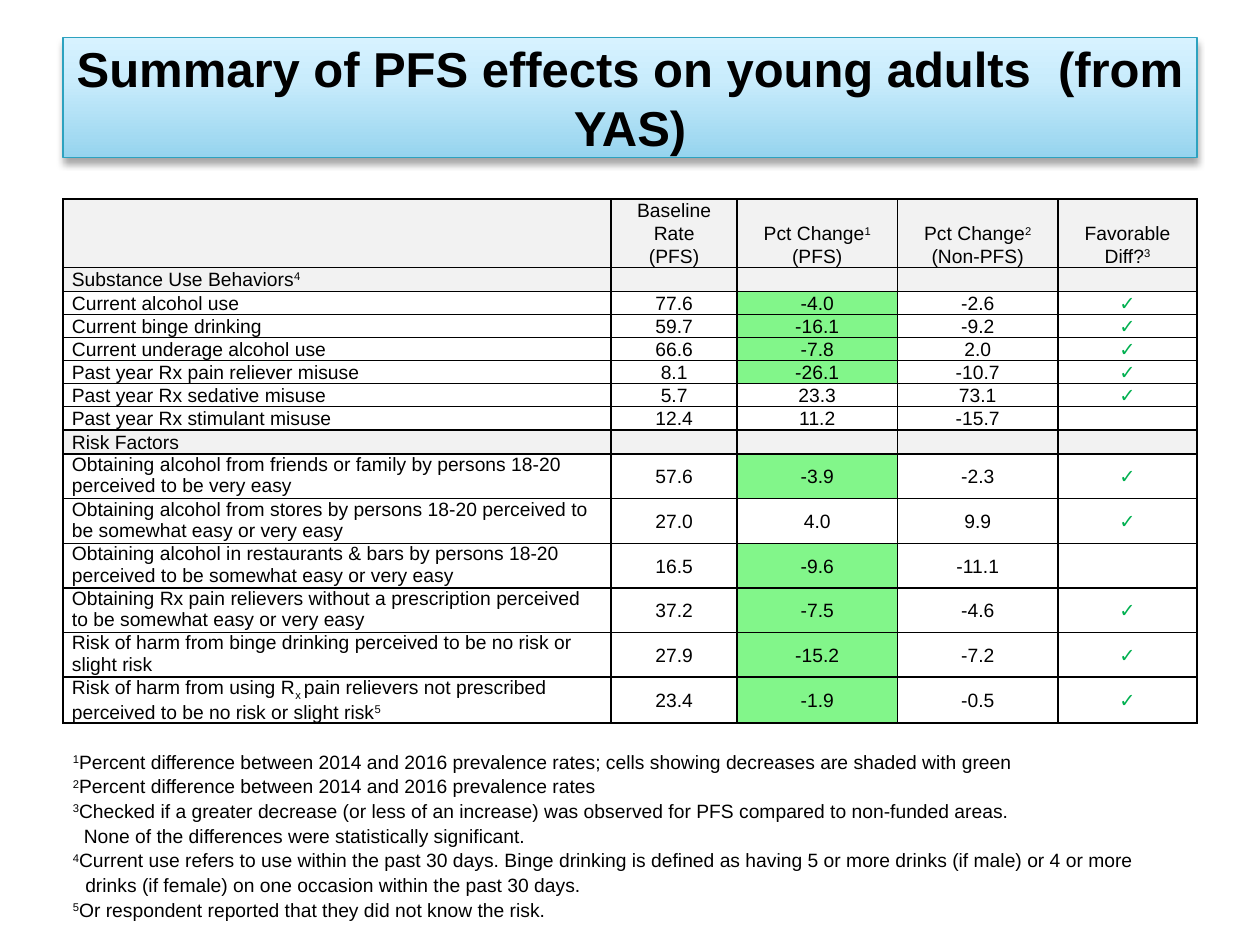
from copy import deepcopy
from dataclasses import dataclass

from pptx import Presentation
from pptx.dml.color import RGBColor
from pptx.enum.text import MSO_ANCHOR, MSO_AUTO_SIZE, PP_ALIGN
from pptx.oxml import parse_xml
from pptx.oxml.ns import nsdecls
from pptx.util import Cm, Pt

LEFT, CENTER = PP_ALIGN.LEFT, PP_ALIGN.CENTER
TOP, MIDDLE, BOTTOM = MSO_ANCHOR.TOP, MSO_ANCHOR.MIDDLE, MSO_ANCHOR.BOTTOM
NO_FIT = MSO_AUTO_SIZE.NONE
SUPER, SUB = 30000, -25000
CHECK = "✓"


@dataclass(frozen=True)
class Theme:
    font: str = "Arial"
    title_size: float = 28
    text_size: float = 11
    text: str = "000000"
    check: str = "00B050"
    decrease: str = "82F68A"
    header: str = "F2F2F2"
    plain: str = "FFFFFF"
    title_line: str = "2DA2BF"
    title_stops: tuple = ((0, "96D4EE"), (0.65, "C9ECFC"), (1, "D7F2FF"))


def apply(obj, fmt):
    for name, value in fmt.items():
        setattr(obj, name, value)


class Deck:
    """Holds the theme and the current slide and adds each kind of element."""

    def __init__(self, theme):
        self.theme = theme
        self.prs = Presentation()
        apply(self.prs, {"slide_width": Cm(25.4), "slide_height": Cm(19.05)})
        self.s = self.prs.slides.add_slide(self.prs.slide_layouts[5])

    def text(self, tf, paragraphs, fmt, size=None, color=None, bold=False):
        size = size or self.theme.text_size
        for i, runs in enumerate(paragraphs):
            p = tf.paragraphs[0] if i == 0 else tf.add_paragraph()
            apply(p, {"space_before": Pt(0), **fmt})
            p._p.get_or_add_endParaRPr().set("sz", str(int(size * 100)))
            for run in [runs] if isinstance(runs, str) else runs:
                text, baseline = (run, 0) if isinstance(run, str) else run
                if not text:
                    continue
                r = p.add_run()
                r.text = text
                apply(r.font, {"name": self.theme.font, "size": Pt(size), "bold": bold})
                r.font.color.rgb = RGBColor.from_string(color or self.theme.text)
                if baseline:
                    r._r.get_or_add_rPr().set("baseline", str(baseline))

    def title(self, text, box):
        sp = self.s.shapes.title
        apply(sp, box)
        sp.fill.gradient()
        sp.fill.gradient_angle = 90
        stops = sp._element.spPr.find(".//{*}gsLst")
        stops.append(deepcopy(stops[-1]))
        for stop, (position, color) in zip(sp.fill.gradient_stops, self.theme.title_stops):
            stop.position = position
            stop.color.rgb = RGBColor.from_string(color)
        sp.line.color.rgb = RGBColor.from_string(self.theme.title_line)
        sp.line.width = Pt(0.75)
        sp._element.spPr.append(parse_xml(
            f'<a:effectLst {nsdecls("a")}><a:outerShdw blurRad="{Pt(4)}" dist="{Pt(3)}" '
            'dir="5400000" rotWithShape="0"><a:srgbClr val="000000">'
            '<a:alpha val="35000"/></a:srgbClr></a:outerShdw></a:effectLst>'))
        apply(sp.text_frame, {"vertical_anchor": MIDDLE, "word_wrap": True, "auto_size": NO_FIT})
        self.text(sp.text_frame, [text], {"alignment": CENTER}, self.theme.title_size, bold=True)

    def table(self, left, top, widths, heights):
        frame = self.s.shapes.add_table(len(heights), len(widths), Cm(left), Cm(top),
                                        Cm(sum(widths)), Cm(sum(heights)))
        apply(frame.table, {"first_row": False, "horz_banding": False})
        for column, width in zip(frame.table.columns, widths):
            column.width = Cm(width)
        for row, height in zip(frame.table.rows, heights):
            row.height = Cm(height)
        return frame.table

    def cell(self, cell, paragraphs, fill, anchor=MIDDLE, align=CENTER, spacing=1.07, **font):
        apply(cell, {"margin_left": Cm(0.18), "margin_right": Cm(0.18), "margin_top": 0,
                     "margin_bottom": 0, "vertical_anchor": anchor})
        cell.fill.solid()
        cell.fill.fore_color.rgb = RGBColor.from_string(fill)
        for i, side in enumerate(("lnL", "lnR", "lnT", "lnB")):
            cell._tc.tcPr.insert(i, parse_xml(
                f'<a:{side} {nsdecls("a")} w="{Pt(1)}"><a:solidFill>'
                f'<a:srgbClr val="{self.theme.text}"/></a:solidFill></a:{side}>'))
        self.text(cell.text_frame, paragraphs, {"alignment": align, "line_spacing": spacing}, **font)

    def notes(self, notes, box):
        tf = self.s.shapes.add_textbox(*box).text_frame
        tf.word_wrap = True
        self.text(tf, [runs for runs, _, _ in notes], {"alignment": LEFT, "line_spacing": 1.07})
        for p, (_, margin, indent) in zip(tf.paragraphs, notes):
            pPr = p._p.get_or_add_pPr()
            pPr.set("marL", str(Cm(margin)))
            pPr.set("indent", str(Cm(indent)))


HEADER = [
    [""],
    ["Baseline Rate", "(PFS)"],
    [["Pct Change", ("1", SUPER)], "(PFS)"],
    [["Pct Change", ("2", SUPER)], "(Non-PFS)"],
    ["Favorable", ["Diff?", ("3", SUPER)]],
]
BEHAVIORS = [
    ("Current alcohol use", "77.6", "-4.0", "-2.6", CHECK),
    ("Current binge drinking", "59.7", "-16.1", "-9.2", CHECK),
    ("Current underage alcohol use", "66.6", "-7.8", "2.0", CHECK),
    ("Past year Rx pain reliever misuse", "8.1", "-26.1", "-10.7", CHECK),
    ("Past year Rx sedative misuse", "5.7", "23.3", "73.1", CHECK),
    ("Past year Rx stimulant misuse", "12.4", "11.2", "-15.7", ""),
]
RISKS = [
    ("Obtaining alcohol from friends or family by persons 18-20 perceived to be very easy",
     "57.6", "-3.9", "-2.3", CHECK),
    ("Obtaining alcohol from stores by persons 18-20 perceived to be somewhat easy or very easy",
     "27.0", "4.0", "9.9", CHECK),
    ("Obtaining alcohol in restaurants & bars by persons 18-20 perceived to be somewhat easy "
     "or very easy", "16.5", "-9.6", "-11.1", ""),
    ("Obtaining Rx pain relievers without a prescription perceived to be somewhat easy "
     "or very easy", "37.2", "-7.5", "-4.6", CHECK),
    ("Risk of harm from binge drinking perceived to be no risk or slight risk",
     "27.9", "-15.2", "-7.2", CHECK),
    (["Risk of harm from using R", ("x ", SUB),
      "pain relievers not prescribed perceived to be no risk or slight risk", ("5", SUPER)],
     "23.4", "-1.9", "-0.5", CHECK),
]
NOTES = [
    ([("1", SUPER), "Percent difference between 2014 and 2016 prevalence rates; "
      "cells showing decreases are shaded with green"], 0, 0),
    ([("2", SUPER), "Percent difference between 2014 and 2016 prevalence rates"], 0, 0),
    ([("3", SUPER), "Checked if a greater decrease (or less of an increase) was observed "
      "for PFS compared to non-funded areas."], 0, 0),
    ("None of the differences were statistically significant.", 0.22, 0),
    ([("4", SUPER), "Current use refers to use within the past 30 days. Binge drinking is defined "
      "as having 5 or more drinks (if male) or 4 or more drinks (if female) on one occasion "
      "within the past 30 days."], 0.25, -0.25),
    ([("5", SUPER), "Or respondent reported that they did not know the risk."], 0.25, -0.25),
]


def main():
    theme = Theme()
    deck = Deck(theme)
    deck.title("Summary of PFS effects on young adults  (from YAS)",
               {"left": Cm(1.27), "top": Cm(0.76), "width": Cm(22.86), "height": Cm(2.41)})

    sections = [(["Substance Use Behaviors", ("4", SUPER)], BEHAVIORS, 1.07),
                ("Risk Factors", RISKS, 1.0)]
    heights = [1.35] + [0.44] * (len(BEHAVIORS) + 2) + [0.9] * len(RISKS)
    table = deck.table(1.27, 4.01, [11.05, 2.54, 3.23, 3.24, 2.8], heights)
    for col, paragraphs in enumerate(HEADER):
        deck.cell(table.cell(0, col), paragraphs, theme.header, BOTTOM)
    row = 1
    for heading, records, spacing in sections:
        for col in range(len(HEADER)):
            deck.cell(table.cell(row, col), [heading if col == 0 else ""], theme.header, TOP, LEFT)
        for row, (label, *values, check) in enumerate(records, row + 1):
            deck.cell(table.cell(row, 0), [label], theme.plain, TOP, LEFT, spacing)
            for col, value in enumerate(values, 1):
                shaded = col == 2 and value.startswith("-")
                deck.cell(table.cell(row, col), [value], theme.decrease if shaded else theme.plain)
            deck.cell(table.cell(row, 4), [check], theme.plain, color=theme.check, bold=True)
        row += 1

    deck.notes(NOTES, (Cm(1.22), Cm(14.96), Cm(22.43), Cm(3.78)))
    deck.prs.save("out.pptx")


if __name__ == "__main__":
    main()
